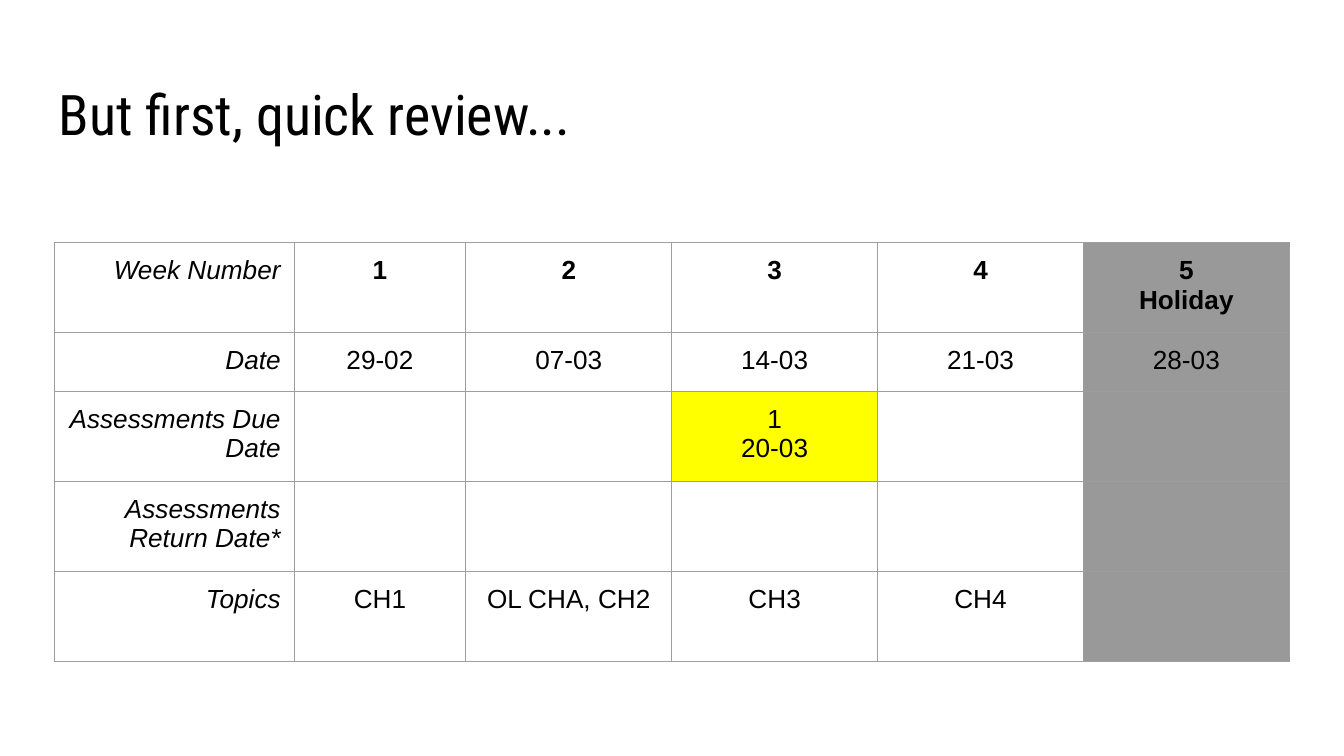
from lxml import etree
from pptx import Presentation
from pptx.dml.color import RGBColor
from pptx.enum import text
from pptx.oxml import ns
from pptx.util import Pt

TITLE = "But first, quick review..."
# One row per line; "\n" starts a new paragraph in a cell
ROWS = [
    ("Week Number", "1", "2", "3", "4", "5\nHoliday"),
    ("Date", "29-02", "07-03", "14-03", "21-03", "28-03"),
    ("Assessments Due Date", "", "", "1\n20-03", "", ""),
    ("Assessments Return Date*", "", "", "", "", ""),
    ("Topics", "CH1", "OL CHA, CH2", "CH3", "CH4", ""),
]
COL_WIDTHS = [128.6, 92, 110.3, 110.3, 110.3, 110.3]
ROW_HEIGHTS = [46, 31.5, 48.3, 48.3, 48.3]
HOLIDAY_COL, DUE_CELL = 5, (2, 3)
BLACK, GREY, YELLOW, BORDER = "000000", "999999", "FFFF00", "9E9E9E"
INSET = 7.2
LEFT, CENTER, RIGHT = text.PP_ALIGN.LEFT, text.PP_ALIGN.CENTER, text.PP_ALIGN.RIGHT


def color(value):
    return RGBColor.from_string(value)


def write(tf, content, font="Arial", size=14, bold=False, italic=False, align=LEFT):
    for i, line in enumerate(content.split("\n")):
        p = tf.paragraphs[0] if i == 0 else tf.add_paragraph()
        p.alignment = align
        # An empty cell still gets its font size from the paragraph
        f = p.font
        if line:
            r = p.add_run()
            r.text = line
            f = r.font
        f.name, f.size, f.bold, f.italic = font, Pt(size), bold, italic
        f.color.rgb = color(BLACK)


def set_borders(cell, line_color, width):
    tc_pr = cell._tc.get_or_add_tcPr()
    for side in ("lnL", "lnR", "lnT", "lnB"):
        ln = etree.SubElement(tc_pr, ns.qn(f"a:{side}"), w=str(Pt(width)))
        fill = etree.SubElement(ln, ns.qn("a:solidFill"))
        etree.SubElement(fill, ns.qn("a:srgbClr"), val=line_color)


def set_insets(item):
    item.margin_left = item.margin_right = Pt(INSET)
    item.margin_top = item.margin_bottom = Pt(INSET)


prs = Presentation()
prs.slide_width, prs.slide_height = Pt(720), Pt(405)
s = prs.slides.add_slide(prs.slide_layouts[6])

# Title
tf = s.shapes.add_textbox(Pt(24.5), Pt(35.3), Pt(671), Pt(45.4)).text_frame
tf.word_wrap = True
tf.vertical_anchor = text.MSO_ANCHOR.TOP
set_insets(tf)
write(tf, TITLE, font="Roboto Condensed", size=30)

# Schedule table
table = s.shapes.add_table(len(ROWS), len(COL_WIDTHS), Pt(29), Pt(130),
                           Pt(sum(COL_WIDTHS)), Pt(sum(ROW_HEIGHTS))).table
table.first_row = table.horz_banding = False
for col, width in zip(table.columns, COL_WIDTHS):
    col.width = Pt(width)
for row, height in zip(table.rows, ROW_HEIGHTS):
    row.height = Pt(height)

for i, row in enumerate(ROWS):
    for j, content in enumerate(row):
        cell = table.cell(i, j)
        set_insets(cell)
        is_label = j == 0
        write(cell.text_frame, content, italic=is_label,
              bold=i == 0 and not is_label, align=RIGHT if is_label else CENTER)
        # Borders come before the fill in the cell's XML
        set_borders(cell, BORDER, 0.75)
        fill = GREY if j == HOLIDAY_COL else YELLOW if (i, j) == DUE_CELL else None
        if fill:
            cell.fill.solid()
            cell.fill.fore_color.rgb = color(fill)
        else:
            cell.fill.background()

prs.save("out.pptx")
